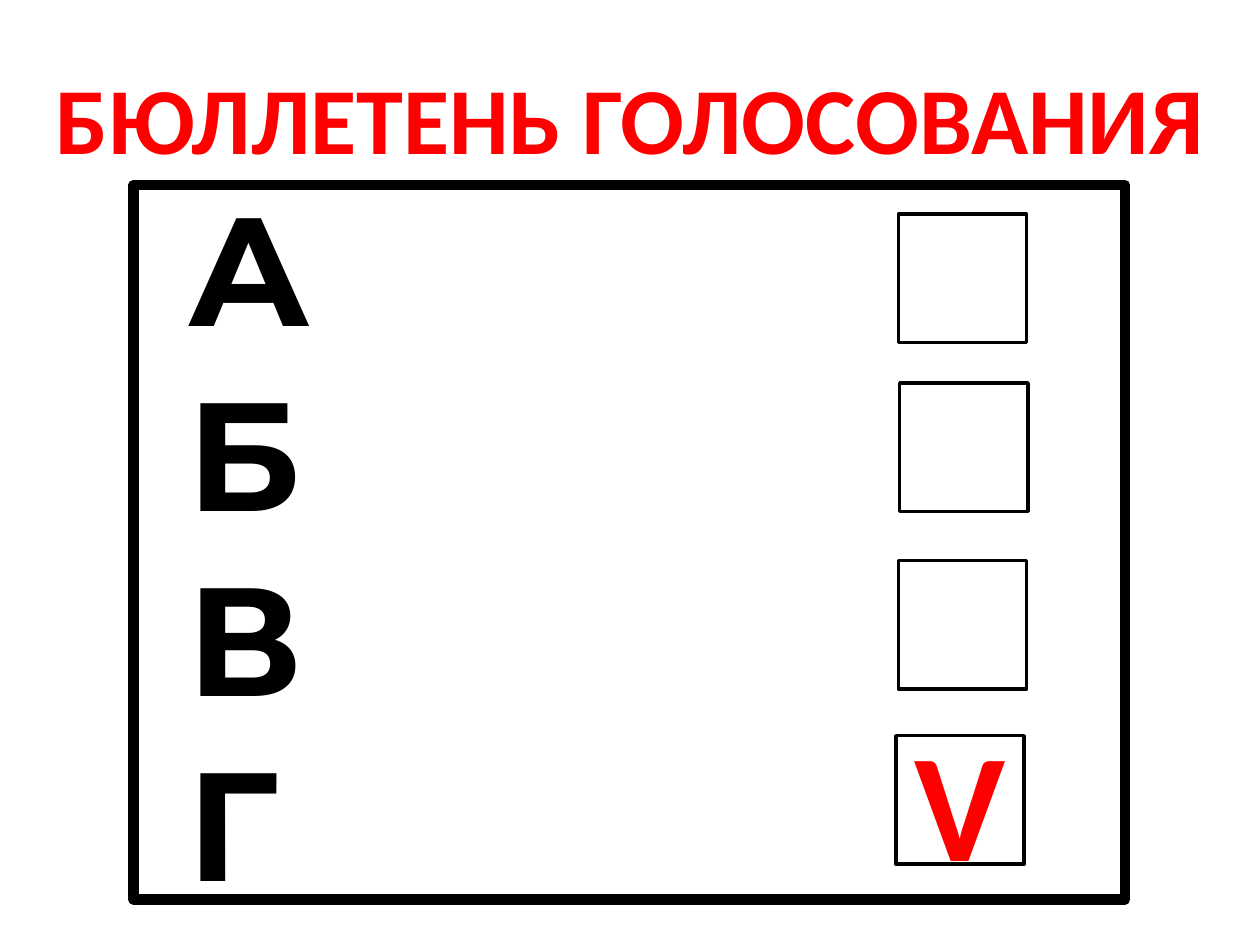
from dataclasses import dataclass

from pptx import Presentation
from pptx.dml.color import RGBColor
from pptx.enum.shapes import MSO_SHAPE
from pptx.enum.text import MSO_ANCHOR, PP_ALIGN
from pptx.util import Pt

RECTANGLE = MSO_SHAPE.RECTANGLE
MIDDLE = MSO_ANCHOR.MIDDLE
LEFT, CENTER = PP_ALIGN.LEFT, PP_ALIGN.CENTER
TITLE_ONLY = 5


@dataclass(frozen=True)
class Theme:
    paper: RGBColor = RGBColor(0xFF, 0xFF, 0xFF)
    ink: RGBColor = RGBColor(0x00, 0x00, 0x00)
    accent: RGBColor = RGBColor(0xFF, 0x00, 0x00)
    main_font: str = "Calibri"
    option_font: str = "Montserrat"
    title_size: int = 54
    option_size: int = 88
    frame_line: int = 6
    check_line: int = 2


THEME = Theme()
OPTIONS = ["А", "Б", "В", "Г"]
CHOICE = "Г"
CHECK_SIZE = 73.4
CHECK_OFFSETS = [(437, 16.6), (437.8, 113), (437, 214.6), (435.6, 314.6)]


def add_span(para, text, font, size, color, align):
    para.alignment = align
    span = para.add_run()
    span.text = text
    span.font.name = font
    span.font.size = Pt(size)
    span.font.bold = True
    span.font.color.rgb = color


def add_rectangle(page, left, top, width, height, line):
    box = page.shapes.add_shape(RECTANGLE, Pt(left), Pt(top), Pt(width), Pt(height))
    box.shadow.inherit = False
    box.fill.solid()
    box.fill.fore_color.rgb = THEME.paper
    box.line.color.rgb = THEME.ink
    box.line.width = Pt(line)
    box.text_frame.vertical_anchor = MIDDLE
    return box


def add_title(page, left, top, width, height):
    title = page.shapes.title
    title.left, title.top = Pt(left), Pt(top)
    title.width, title.height = Pt(width), Pt(height)
    title.text_frame.vertical_anchor = MIDDLE
    add_span(title.text_frame.paragraphs[0], "БЮЛЛЕТЕНЬ ГОЛОСОВАНИЯ",
             THEME.main_font, THEME.title_size, THEME.accent, CENTER)


def add_ballot(page, left, top, width, height):
    frame = add_rectangle(page, left, top, width, height, THEME.frame_line)
    text = frame.text_frame
    text.margin_left = Pt(31)
    for index, (option, (across, down)) in enumerate(zip(OPTIONS, CHECK_OFFSETS)):
        para = text.add_paragraph() if index else text.paragraphs[0]
        add_span(para, option, THEME.option_font, THEME.option_size, THEME.ink, LEFT)
        check = add_rectangle(page, left + across, top + down,
                              CHECK_SIZE, CHECK_SIZE, THEME.check_line)
        if option == CHOICE:
            add_span(check.text_frame.paragraphs[0], "V", THEME.main_font,
                     THEME.option_size, THEME.accent, CENTER)


def main():
    deck = Presentation()
    deck.slide_width, deck.slide_height = Pt(720), Pt(540)
    page = deck.slides.add_slide(deck.slide_layouts[TITLE_ONLY])
    add_title(page, 0, 21.6, 720, 90)
    add_ballot(page, 76.3, 105.8, 566.6, 408.2)
    deck.save("out.pptx")


if __name__ == "__main__":
    main()
